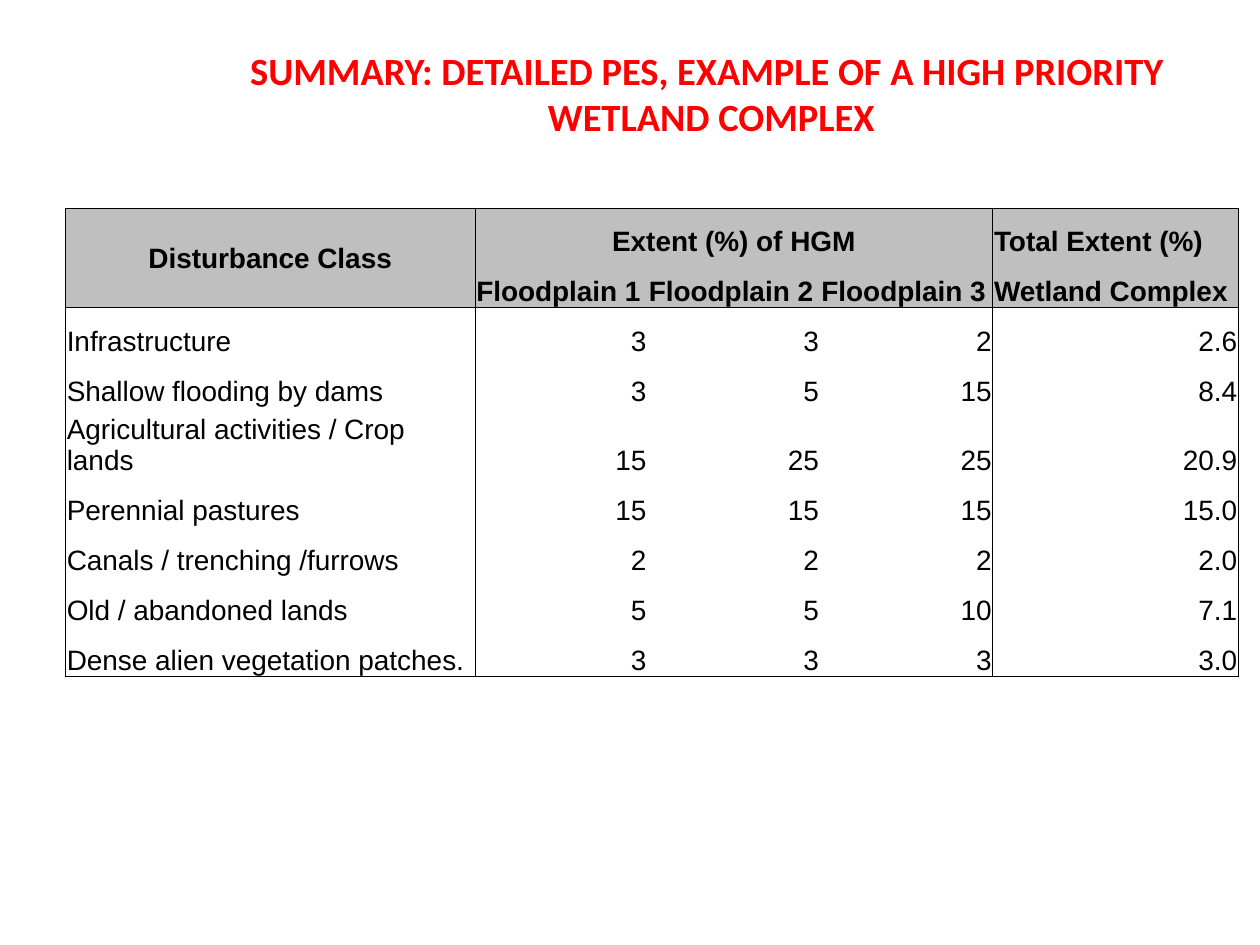
"""Build the wetland disturbance summary slide."""
from dataclasses import dataclass

from lxml import etree
from pptx import Presentation
from pptx import util as u
from pptx.dml.color import RGBColor
from pptx.enum import text
from pptx.oxml.ns import qn

COLORS = {"title": "FF0000", "ink": "000000", "header": "BFBFBF"}
SLIDE_W, SLIDE_H = 10, 7.5
COLUMNS = (3.25, 1.37, 1.37, 1.37, 1.95)
HEADER_ROWS = 2
LEFT, CENTER, RIGHT = text.PP_ALIGN.LEFT, text.PP_ALIGN.CENTER, text.PP_ALIGN.RIGHT
TITLE = ("SUMMARY: DETAILED PES, EXAMPLE OF A HIGH PRIORITY ", "WETLAND COMPLEX")
ROWS = (
    ("Disturbance Class", "Extent (%) of HGM", "", "", "Total Extent (%)"),
    ("", "Floodplain 1", "Floodplain 2", "Floodplain 3", "Wetland Complex"),
    ("Infrastructure", "3", "3", "2", "2.6"),
    ("Shallow flooding by dams", "3", "5", "15", "8.4"),
    ("Agricultural activities / Crop lands", "15", "25", "25", "20.9"),
    ("Perennial pastures", "15", "15", "15", "15.0"),
    ("Canals / trenching /furrows", "2", "2", "2", "2.0"),
    ("Old / abandoned lands", "5", "5", "10", "7.1"),
    ("Dense alien vegetation patches.", "3", "3", "3", "3.0"),
)


@dataclass(frozen=True)
class Box:
    """A rectangle in inches."""
    left: float
    top: float
    width: float
    height: float

    def emu(self) -> tuple:
        """Return the rectangle as slide lengths."""
        return tuple(u.Inches(v) for v in (self.left, self.top, self.width, self.height))


@dataclass(frozen=True)
class CellStyle:
    """The look of one table cell."""
    align: int
    header: bool
    middle: bool
    sides: dict


def style_font(font, name: str, size: float, color: str, bold: bool) -> None:
    """Set typeface, size, colour and weight."""
    font.name, font.size, font.bold = name, u.Pt(size), bold
    font.color.rgb = RGBColor.from_string(COLORS[color])


def style_for(row: int, col: int) -> CellStyle:
    """Find a cell's look from its place in the header or body block."""
    header = row < HEADER_ROWS
    corner, group = (row, col) == (0, 0), (row, col) == (0, 1)
    sides = {
        "lnL": col in (0, 1, 4),
        "lnR": col in (0, 3, 4) or group,
        "lnT": row in (0, HEADER_ROWS),
        "lnB": row in (HEADER_ROWS - 1, len(ROWS) - 1) or corner,
    }
    align = CENTER if corner or group else LEFT if header or col == 0 else RIGHT
    return CellStyle(align, header, corner, sides)


def set_borders(cell, sides: dict) -> None:
    """Draw the chosen sides and clear the others."""
    tc_pr = cell._tc.get_or_add_tcPr()
    for tag, shown in sides.items():
        ln = etree.SubElement(tc_pr, qn(f"a:{tag}"), w=str(u.Pt(0.5)))
        fill = etree.SubElement(ln, qn("a:solidFill" if shown else "a:noFill"))
        if shown:
            etree.SubElement(fill, qn("a:srgbClr"), val=COLORS["ink"])


def draw_cell(cell, label: str, style: CellStyle) -> None:
    """Fill, border and write one cell."""
    set_borders(cell, style.sides)
    if style.header:
        cell.fill.solid()
        cell.fill.fore_color.rgb = RGBColor.from_string(COLORS["header"])
    else:
        cell.fill.background()
    cell.margin_left = cell.margin_right = cell.margin_top = u.Inches(0.01)
    cell.margin_bottom = 0
    anchor = text.MSO_ANCHOR
    cell.vertical_anchor = anchor.MIDDLE if style.middle else anchor.BOTTOM
    p = cell.text_frame.paragraphs[0]
    p.text, p.alignment = label, style.align
    for r in p.runs:
        style_font(r.font, "Arial", 16, "ink", style.header)


def draw_table(s, box: Box) -> None:
    """Add the disturbance table."""
    table = s.shapes.add_table(len(ROWS), len(COLUMNS), *box.emu()).table
    table.first_row = table.horz_banding = False
    for column, width in zip(table.columns, COLUMNS):
        column.width = u.Inches(width)
    table.cell(0, 0).merge(table.cell(1, 0))
    table.cell(0, 1).merge(table.cell(0, 3))
    for row, labels in enumerate(ROWS):
        for col, label in enumerate(labels):
            draw_cell(table.cell(row, col), label, style_for(row, col))


def draw_title(s, box: Box) -> None:
    """Place and format the title."""
    sp = s.shapes.title
    sp.left, sp.top, sp.width, sp.height = box.emu()
    tf = sp.text_frame
    tf.text = "\n".join(TITLE)
    tf.word_wrap = False
    tf.auto_size = text.MSO_AUTO_SIZE.SHAPE_TO_FIT_TEXT
    tf.vertical_anchor = text.MSO_ANCHOR.TOP
    for p in tf.paragraphs:
        p.alignment = CENTER
        for r in p.runs:
            style_font(r.font, "Calibri", 22, "title", True)


def main() -> None:
    """Build and save the slide."""
    prs = Presentation()
    prs.slide_width, prs.slide_height = u.Inches(SLIDE_W), u.Inches(SLIDE_H)
    s = prs.slides.add_slide(prs.slide_layouts[5])
    draw_table(s, Box(0.052 * SLIDE_W, 0.22 * SLIDE_H, sum(COLUMNS), 3.57))
    draw_title(s, Box(1.84, 0.32, 7.61, 0.84))
    prs.save("out.pptx")


if __name__ == "__main__":
    main()
